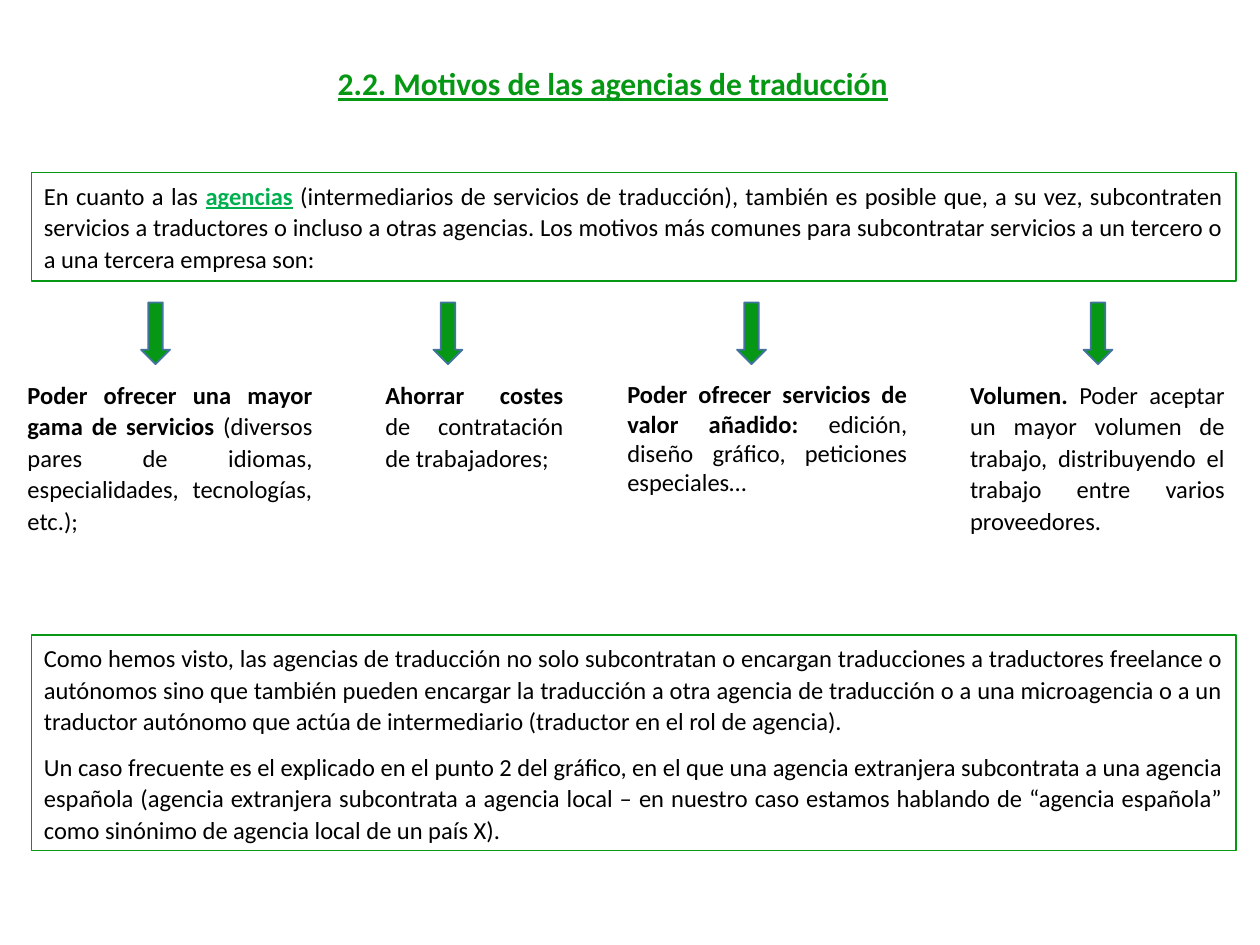
from pptx import Presentation
from pptx.dml.color import RGBColor
from pptx.enum.shapes import MSO_SHAPE
from pptx.enum.text import MSO_ANCHOR, MSO_AUTO_SIZE, PP_ALIGN
from pptx.util import Inches, Pt

GREEN = RGBColor(0x06, 0x98, 0x14)
LIGHT_GREEN = RGBColor(0x00, 0xB0, 0x50)
ARROW_EDGE = RGBColor(0x43, 0x73, 0x9E)
BLACK = RGBColor(0x00, 0x00, 0x00)
DOWN_ARROW, RECTANGLE = MSO_SHAPE.DOWN_ARROW, MSO_SHAPE.RECTANGLE
TOP, FIT_SHAPE = MSO_ANCHOR.TOP, MSO_AUTO_SIZE.SHAPE_TO_FIT_TEXT
LEFT, JUSTIFY = PP_ALIGN.LEFT, PP_ALIGN.JUSTIFY

PLAIN = {"name": "Calibri", "size": Pt(14), "bold": False, "color": BLACK}
BOLD = {**PLAIN, "bold": True}
KEYWORD = {**BOLD, "underline": True, "color": LIGHT_GREEN}
HEADING = {**BOLD, "size": Pt(18), "underline": True, "color": GREEN}
FRAME = {"auto_size": FIT_SHAPE, "vertical_anchor": TOP, "word_wrap": True}
SPACED = {"alignment": JUSTIFY, "line_spacing": 1.07, "space_after": Pt(8)}
COMPACT = {"alignment": JUSTIFY}


def apply(target, values):
    for attribute, value in values.items():
        if attribute == "color":
            target.color.rgb = value
        else:
            setattr(target, attribute, value)


def write(frame, paragraphs, frame_format=FRAME, paragraph_format=SPACED):
    apply(frame, frame_format)
    for index, runs in enumerate(paragraphs):
        paragraph = frame.add_paragraph() if index else frame.paragraphs[0]
        apply(paragraph, paragraph_format)
        for text, font_format in runs:
            run = paragraph.add_run()
            run.text = text
            apply(run.font, font_format)


prs = Presentation()
prs.slide_width, prs.slide_height = Inches(10), Inches(7.5)
slide = prs.slides.add_slide(prs.slide_layouts[5])

title = slide.shapes.title
apply(title, {"left": Inches(2.58), "top": Inches(0.44),
              "width": Inches(4.6), "height": Inches(0.43)})
write(title.text_frame, [[("2.2. Motivos de las agencias de traducción", HEADING)]],
      {**FRAME, "word_wrap": False}, {**SPACED, "alignment": LEFT})

introduction = [[
    ("En cuanto a las ", PLAIN),
    ("agencias", KEYWORD),
    (" (intermediarios de servicios de traducción), también es posible que, a su vez, "
     "subcontraten servicios a traductores o incluso a otras agencias. Los motivos más "
     "comunes para subcontratar servicios a un tercero o a una tercera empresa son:", PLAIN),
]]
conclusion = [
    [("Como hemos visto, las agencias de traducción no solo subcontratan o encargan "
      "traducciones a traductores freelance o autónomos sino que también pueden encargar "
      "la traducción a otra agencia de traducción o a una microagencia o a un traductor "
      "autónomo que actúa de intermediario (traductor en el rol de agencia).", PLAIN)],
    [("Un caso frecuente es el explicado en el punto 2 del gráfico, en el que una agencia "
      "extranjera subcontrata a una agencia española (agencia extranjera subcontrata "
      "a agencia local – en nuestro caso estamos hablando de “agencia española” como "
      "sinónimo de agencia local de un país X).", PLAIN)],
]
for top, height, paragraphs in [(1.37, 0.86, introduction), (5.04, 1.71, conclusion)]:
    panel = slide.shapes.add_shape(RECTANGLE, Inches(0.25), Inches(top),
                                   Inches(9.56), Inches(height))
    panel.shadow.inherit = False
    panel.fill.background()
    apply(panel.line, {"color": GREEN, "width": Pt(0.75)})
    write(panel.text_frame, paragraphs)

reasons = [
    (1.12, 0.12, 2.95, 2.46, 1.36, SPACED, "Poder ofrecer una mayor gama de servicios",
     " (diversos pares de idiomas, especialidades, tecnologías, etc.);"),
    (3.44, 2.96, 2.95, 1.61, 0.86, SPACED, "Ahorrar costes ",
     "de contratación de trabajadores;"),
    (5.85, 4.88, 2.96, 2.42, 1.04, COMPACT, "Poder ofrecer servicios de valor añadido: ",
     "edición, diseño gráfico, peticiones especiales…"),
    (8.6, 7.6, 2.95, 2.22, 1.36, SPACED, "Volumen.",
     " Poder aceptar un mayor volumen de trabajo, distribuyendo el trabajo entre varios "
     "proveedores."),
]
for arrow_left, left, top, width, height, spacing, motive, detail in reasons:
    arrow = slide.shapes.add_shape(DOWN_ARROW, Inches(arrow_left), Inches(2.4),
                                   Inches(0.23), Inches(0.49))
    arrow.shadow.inherit = False
    arrow.fill.solid()
    arrow.fill.fore_color.rgb = GREEN
    apply(arrow.line, {"color": ARROW_EDGE, "width": Pt(1)})
    reason = slide.shapes.add_textbox(Inches(left), Inches(top), Inches(width), Inches(height))
    write(reason.text_frame, [[(motive, BOLD), (detail, PLAIN)]], paragraph_format=spacing)

prs.save("out.pptx")
